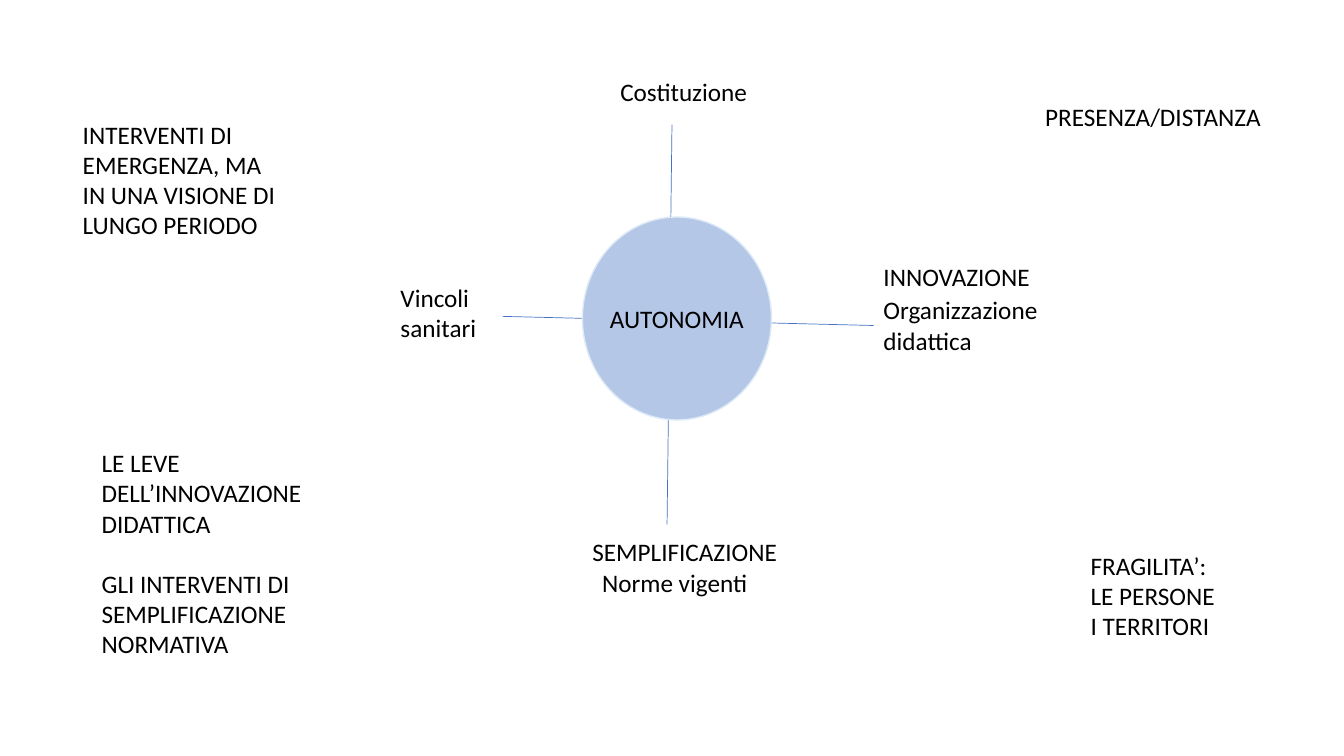
from dataclasses import dataclass

from lxml import etree
from pptx import Presentation
from pptx.dml.color import RGBColor
from pptx.enum import shapes, text
from pptx.oxml import ns
from pptx.util import Pt


@dataclass(frozen=True)
class Theme:
    font: str = "Calibri"
    size: float = 18
    line_height: float = 21.6
    ink: str = "000000"
    hub_fill: str = "B4C7E7"
    hub_edge: str = "DEEBF7"
    hub_edge_width: float = 1
    spoke: str = "4472C4"
    spoke_width: float = 0.5


THEME = Theme()


def write(frame, *paragraphs, size=THEME.size, color=THEME.ink,
          align=text.PP_ALIGN.LEFT, gap=0, wrap=True):
    """Fill a text frame; gap is the space in points between paragraphs."""
    frame.word_wrap = wrap
    for index, wording in enumerate(paragraphs):
        paragraph = frame.add_paragraph() if index else frame.paragraphs[0]
        paragraph.alignment = align
        paragraph.space_before = Pt(gap if index else 0)
        run = paragraph.add_run()
        run.text = wording
        run.font.name = THEME.font
        run.font.size = Pt(size)
        run.font.color.rgb = RGBColor.from_string(color)


def add_label(slide, box, *paragraphs, **style):
    label = slide.shapes.add_textbox(*map(Pt, box))
    write(label.text_frame, *paragraphs, **style)
    return label


def add_spoke(slide, start, end):
    spoke = slide.shapes.add_connector(
        shapes.MSO_CONNECTOR.STRAIGHT, *map(Pt, (*start, *end)))
    spoke.line.color.rgb = RGBColor.from_string(THEME.spoke)
    spoke.line.width = Pt(THEME.spoke_width)
    etree.SubElement(spoke.element.spPr, ns.qn("a:effectLst"))
    return spoke


def add_hub(slide, box):
    left, top, width, height = box
    hub = slide.shapes.add_shape(
        shapes.MSO_SHAPE.OVAL, Pt(left), Pt(top), Pt(width), Pt(height))
    hub.shadow.inherit = False
    hub.fill.solid()
    hub.fill.fore_color.rgb = RGBColor.from_string(THEME.hub_fill)
    hub.line.color.rgb = RGBColor.from_string(THEME.hub_edge)
    hub.line.width = Pt(THEME.hub_edge_width)
    hub.text_frame.vertical_anchor = text.MSO_ANCHOR.MIDDLE
    write(hub.text_frame, "AUTONOMIA", align=text.PP_ALIGN.CENTER, wrap=False)


def add_autonomy_map(slide, box):
    """Draw the central circle with its four branches."""
    left, top, width, height = box

    def place(x, y, w, h):
        return left + x, top + y, w, h

    add_label(slide, place(157, 0, 135, 29), "Costituzione")
    add_label(slide, place(144, height - 29, 163, 29), "Norme vigenti")
    add_label(slide, place(0, 147, 80, 51), "Vincoli sanitari")
    organisation = add_label(slide, place(345, 156, 127, 51),
                             "Organizzazione didattica")
    add_spoke(slide, (left + 201, top + 38), (left + 197.5, top + 323.5))
    across = add_spoke(slide, (left + 80, top + 175), (left + 345, top + 181))
    across.end_connect(organisation, 1)
    add_label(slide, place(345, 132, width - 345, 29), "INNOVAZIONE")
    add_label(slide, place(137, height - 51.5, 176, 29), "SEMPLIFICAZIONE")
    add_hub(slide, place(137, 104, 135, 145))


def add_corner_topics(slide, box):
    """Place the four topics around the map."""
    left, top, width, height = box
    right, bottom = left + width, top + height
    add_label(slide, (left, top + 13, 156, 94),
              "INTERVENTI DI EMERGENZA, MA IN UNA VISIONE DI LUNGO PERIODO")
    add_label(slide, (left + 13.5, bottom - 160, 159, 160),
              "LE LEVE DELL’INNOVAZIONE DIDATTICA",
              "GLI INTERVENTI DI SEMPLIFICAZIONE NORMATIVA",
              gap=THEME.line_height)
    add_label(slide, (right - 195.5, top, 186, 29), "PRESENZA/DISTANZA")
    add_label(slide, (right - 163, bottom - 86.5, 163, 73),
              "FRAGILITA’:", "LE PERSONE", "I TERRITORI")


def main():
    deck = Presentation()
    deck.slide_width, deck.slide_height = Pt(960), Pt(540)
    slide = deck.slides.add_slide(deck.slide_layouts[6])
    add_autonomy_map(slide, (279, 51, 527, 380))
    add_corner_topics(slide, (52, 68.5, 883, 407.5))
    deck.save("out.pptx")


if __name__ == "__main__":
    main()
